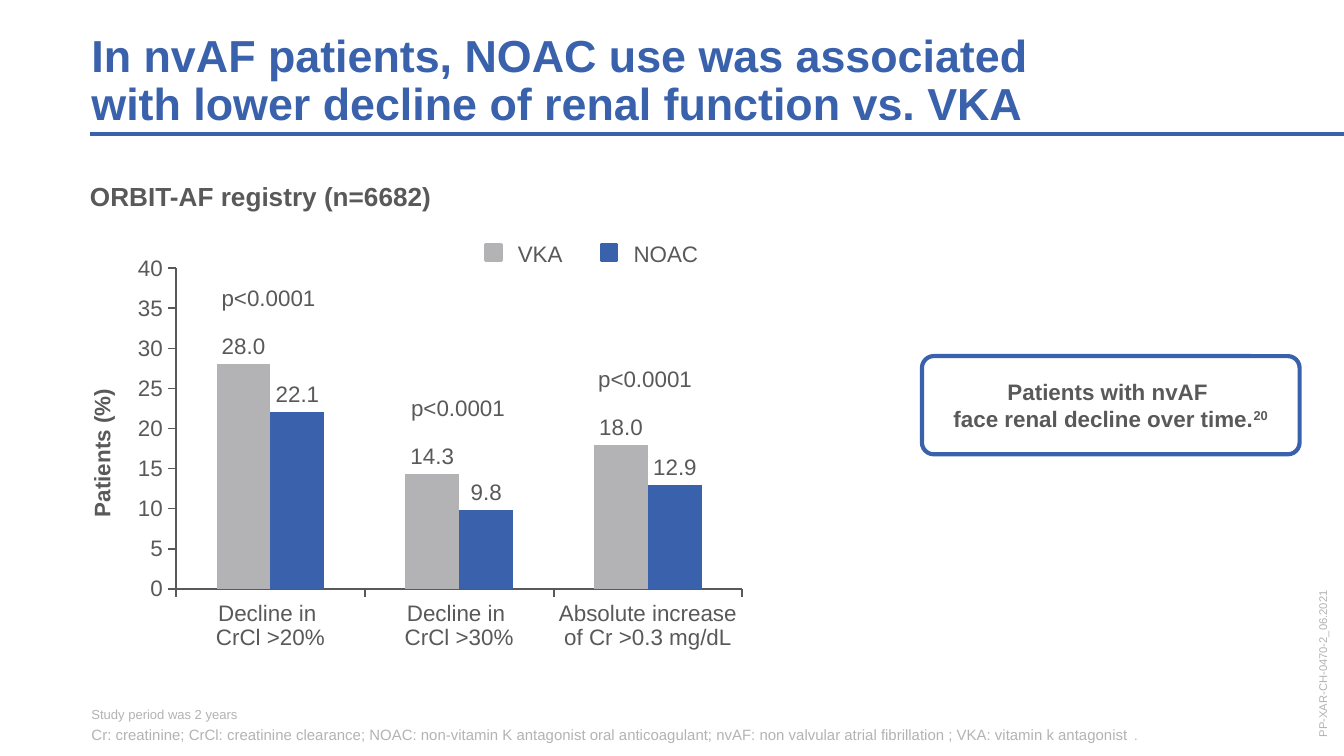
from lxml import etree
from pptx import Presentation
from pptx.chart.data import CategoryChartData
from pptx.dml.color import RGBColor
from pptx.enum.chart import XL_CHART_TYPE, XL_LABEL_POSITION, XL_TICK_MARK
from pptx.enum.shapes import MSO_CONNECTOR, MSO_SHAPE
from pptx.enum.text import MSO_ANCHOR, MSO_AUTO_SIZE, PP_ALIGN
from pptx.oxml import parse_xml
from pptx.oxml.ns import nsdecls, qn
from pptx.util import Pt

COLUMNS = XL_CHART_TYPE.COLUMN_CLUSTERED
OUTSIDE_END = XL_LABEL_POSITION.OUTSIDE_END
TICK_OUT = XL_TICK_MARK.OUTSIDE
STRAIGHT = MSO_CONNECTOR.STRAIGHT
RECTANGLE, ROUNDED = MSO_SHAPE.RECTANGLE, MSO_SHAPE.ROUNDED_RECTANGLE
TOP, MIDDLE, BOTTOM = MSO_ANCHOR.TOP, MSO_ANCHOR.MIDDLE, MSO_ANCHOR.BOTTOM
LEFT, CENTER = PP_ALIGN.LEFT, PP_ALIGN.CENTER
NO_FIT = MSO_AUTO_SIZE.NONE

FONT = "Arial"
COLORS = {"blue": "3961AC", "gray": "B3B2B5", "text": "595959", "white": "FFFFFF"}
SERIES = {
    "VKA": ("gray", (28.0, 14.3, 18.0)),
    "NOAC": ("blue", (22.1, 9.8, 12.9)),
}
CATEGORIES = ("Decline in \nCrCl >20%", "Decline in \nCrCl >30%",
              "Absolute increase of Cr >0.3 mg/dL")
PLOT_AREA = {"x": 0.19, "y": 0.166, "w": 0.684, "h": 0.662}


def rgb(name):
    return RGBColor.from_string(COLORS[name])


class SlideBuilder:
    """Holds the style and the current slide; all lengths are in points."""

    def __init__(self, page):
        self.page = page

    def style(self, font, size=12, color="text", bold=False):
        values = {"name": FONT, "size": Pt(size), "bold": bold}
        for name, value in values.items():
            setattr(font, name, value)
        font.color.rgb = rgb(color)

    def set_text(self, frame, paragraphs, anchor=MIDDLE, align=LEFT, inset=0,
                 wrap=True, para_format=None, **font):
        """Each paragraph is a list of (text, font overrides, baseline)."""
        values = {"auto_size": NO_FIT, "word_wrap": wrap, "vertical_anchor": anchor}
        for side in ("left", "top", "right", "bottom"):
            values[f"margin_{side}"] = Pt(inset)
        for name, value in values.items():
            setattr(frame, name, value)
        for index, spans in enumerate(paragraphs):
            para = frame.add_paragraph() if index else frame.paragraphs[0]
            para.alignment = align
            for name, value in (para_format or {}).items():
                setattr(para, name, value)
            for text, overrides, baseline in spans:
                for number, line in enumerate(text.split("\n")):
                    if number:
                        para.add_line_break()
                    span = para.add_run()
                    span.text = line
                    self.style(span.font, **{**font, **overrides})
                    if baseline:
                        span.font._element.set("baseline", str(baseline))

    def title(self, area, text, **options):
        box = self.page.shapes.title
        box.left, box.top, box.width, box.height = map(Pt, area)
        self.set_text(box.text_frame, [[(text, {}, 0)]], **options)

    def text(self, area, paragraphs, rotation=0, **options):
        if isinstance(paragraphs, str):
            paragraphs = [[(paragraphs, {}, 0)]]
        box = self.page.shapes.add_textbox(*map(Pt, area))
        box.rotation = rotation
        self.set_text(box.text_frame, paragraphs, **options)

    def shape(self, kind, area, fill, line, width):
        box = self.page.shapes.add_shape(kind, *map(Pt, area))
        box.shadow.inherit = False
        box.fill.solid()
        box.fill.fore_color.rgb = rgb(fill)
        box.line.color.rgb = rgb(line)
        box.line.width = Pt(width)
        return box

    def line(self, start, end, color, width):
        rule = self.page.shapes.add_connector(STRAIGHT, *map(Pt, start + end))
        rule.line.color.rgb = rgb(color)
        rule.line.width = Pt(width)
        etree.SubElement(rule._element.spPr, qn("a:effectLst"))

    def axis(self, axis):
        axis.has_major_gridlines = False
        axis.major_tick_mark = TICK_OUT
        axis.format.line.color.rgb = rgb("text")
        axis.format.line.width = Pt(1)
        self.style(axis.tick_labels.font)

    def column_chart(self, area, axis_title, maximum, step):
        data = CategoryChartData(number_format="0.0")
        data.categories = CATEGORIES
        for name, (_, values) in SERIES.items():
            data.add_series(name, values)
        chart = self.page.shapes.add_chart(COLUMNS, *map(Pt, area), data).chart
        chart.has_legend = chart.has_title = False
        self.style(chart.font, size=14)

        # Axes
        self.axis(chart.category_axis)
        values = chart.value_axis
        self.axis(values)
        values.minimum_scale, values.maximum_scale = 0, maximum
        values.major_unit = step
        values.tick_labels.number_format = "0"
        values.tick_labels.number_format_is_linked = False
        frame = values.axis_title.text_frame
        frame._txBody.bodyPr.set("rot", "-5400000")
        span = frame.paragraphs[0].add_run()
        span.text = axis_title
        self.style(span.font, bold=True)

        # Columns and their labels
        plot = chart.plots[0]
        plot.gap_width, plot.overlap = 150, 0
        plot.vary_by_categories = False
        for series in plot.series:
            series.format.fill.solid()
            series.format.fill.fore_color.rgb = rgb(SERIES[series.name][0])
            labels = series.data_labels
            options = {"show_value": True, "position": OUTSIDE_END,
                       "number_format": "0.0", "number_format_is_linked": False}
            for name, value in options.items():
                setattr(labels, name, value)
            self.style(labels.font)

        # Fixed inner plot area
        plot_area = chart._chartSpace.chart.plotArea
        for old in plot_area.findall(qn("c:layout")):
            plot_area.remove(old)
        modes = '<c:xMode val="edge"/><c:yMode val="edge"/>'
        sizes = "".join(f'<c:{key} val="{part}"/>' for key, part in PLOT_AREA.items())
        plot_area.insert(0, parse_xml(
            f'<c:layout {nsdecls("c")}><c:manualLayout>'
            f'<c:layoutTarget val="inner"/>{modes}{sizes}'
            '</c:manualLayout></c:layout>'))


def main():
    deck = Presentation()
    deck.slide_width, deck.slide_height = Pt(720), Pt(405)
    slide = SlideBuilder(deck.slides.add_slide(deck.slide_layouts[5]))

    # Heading
    slide.title((49, 17.3, 651.6, 52.5),
                "In nvAF patients, NOAC use was associated \n"
                "with lower decline of renal function vs. VKA",
                anchor=BOTTOM, size=24, color="blue", bold=True,
                para_format={"line_spacing": 0.9})
    slide.line((48.2, 72), (720, 72), "blue", 2.25)
    slide.text((48.2, 96.5, 434, 17.3), "ORBIT-AF registry (n=6682)",
               anchor=TOP, size=14, bold=True)

    # Chart with significance values
    slide.column_chart((10.1, 100.8, 443.5, 259.2), "Patients (%)", 40, 5)
    for left, top in ((111.5, 148.3), (213, 207.4), (313.2, 191.5)):
        slide.text((left, top, 64.8, 22.3), "p<0.0001", align=CENTER, wrap=False)

    # Legend
    for left, (name, (color, _)) in zip((260, 322), SERIES.items()):
        slide.shape(RECTANGLE, (left, 131, 8.6, 8.6), color, color, 1.5)
        slide.text((left + 17.4, 124.6, 40, 22.3), name)

    # Key message
    callout = slide.shape(ROUNDED, (493.9, 190.8, 202.3, 52.6), "white", "blue", 2.25)
    callout.adjustments[0] = 0.12
    message = "Patients with nvAF \nface renal decline over time."
    slide.set_text(callout.text_frame, [[(message, {}, 0), ("20", {}, 30000)]],
                   align=CENTER, inset=2.9, bold=True)

    # Footnotes and document code
    abbreviations = ("Cr: creatinine; CrCl: creatinine clearance; NOAC: non-vitamin K "
                     "antagonist oral anticoagulant; nvAF: non valvular atrial "
                     "fibrillation ; VKA: vitamin k antagonist ")
    slide.text((49, 378, 651.6, 20.2),
               [[("Study period was 2 years", {"size": 7}, 0)],
                [(abbreviations, {}, 0), (".", {"size": 7}, 0)]],
               anchor=BOTTOM, size=8, color="gray",
               para_format={"space_after": Pt(2)})
    slide.text((658.1, 333.4, 100.8, 22.3), "PP-XAR-CH-0470-2_06.2021",
               rotation=270, size=6, color="gray")

    deck.save("out.pptx")


if __name__ == "__main__":
    main()
